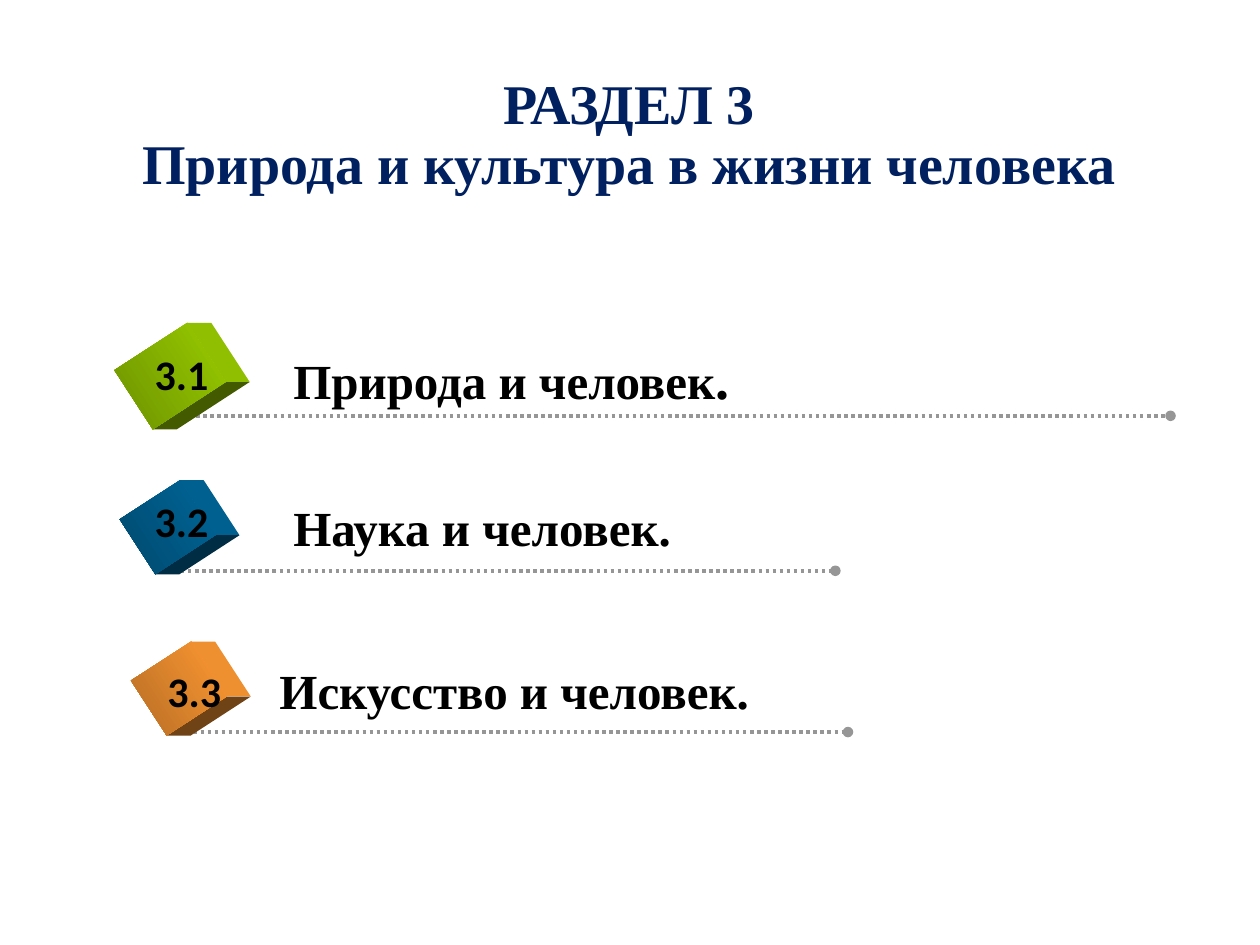
import math
from dataclasses import dataclass

from lxml import etree
from pptx import Presentation
from pptx.dml.color import RGBColor
from pptx.enum.dml import MSO_LINE
from pptx.enum.shapes import MSO_CONNECTOR, MSO_SHAPE
from pptx.enum.text import MSO_ANCHOR, PP_ALIGN
from pptx.oxml.ns import qn
from pptx.util import Inches, Pt

STRAIGHT = MSO_CONNECTOR.STRAIGHT
RECTANGLE = MSO_SHAPE.RECTANGLE
DOTTED = MSO_LINE.ROUND_DOT
MIDDLE = MSO_ANCHOR.MIDDLE
TOP = MSO_ANCHOR.TOP
CENTER = PP_ALIGN.CENTER
LEFT = PP_ALIGN.LEFT

NAVY = RGBColor(0x00, 0x20, 0x60)
BLACK = RGBColor(0x00, 0x00, 0x00)
GRAY = RGBColor(0x96, 0x96, 0x96)
GREEN = RGBColor(0x99, 0xCC, 0x00)
GREEN_SIDE = RGBColor(0x8F, 0xBF, 0x00)
GREEN_SHADE = RGBColor(0x43, 0x5A, 0x00)
GREEN_DARK = RGBColor(0x6D, 0x92, 0x00)
BLUE = RGBColor(0x00, 0x66, 0x99)
BLUE_SIDE = RGBColor(0x00, 0x60, 0x90)
BLUE_SHADE = RGBColor(0x00, 0x2D, 0x44)
BLUE_DARK = RGBColor(0x00, 0x49, 0x6D)
ORANGE = RGBColor(0xFF, 0x99, 0x33)
ORANGE_SIDE = RGBColor(0xEF, 0x90, 0x30)
ORANGE_SHADE = RGBColor(0x70, 0x43, 0x16)
ORANGE_DARK = RGBColor(0xB6, 0x6D, 0x24)

SERIF = "Times New Roman"
TITLE_FORMAT = {"name": SERIF, "size": Pt(32), "bold": True}
TOPIC_FORMAT = {"name": SERIF, "size": Pt(28), "bold": True}
NUMBER_FORMAT = {"name": "Calibri", "size": Pt(24), "bold": True}
CUBE_ANGLE = 57
CUBE_DEPTH = 0.19


@dataclass
class Topic:
    """One numbered topic; offsets are measured from its cube's box."""
    number: str
    runs: list
    colors: tuple
    box: tuple
    number_box: tuple
    topic_box: tuple
    rule: tuple


TOPICS = [
    Topic("3.1", [("Природа и человек", TOPIC_FORMAT), (".", TITLE_FORMAT)],
          (GREEN, GREEN_DARK, GREEN_SIDE, GREEN_SHADE), (1.07, 2.64, 0.56, 0.69),
          (0.06, 0.08, 0.64, 0.51), (1.16, 0.04, 3.7, 0.64), (0.43, 0.66, 7.79)),
    Topic("3.2", [("Наука и человек.", TOPIC_FORMAT)],
          (BLUE, BLUE_DARK, BLUE_SIDE, BLUE_SHADE), (1.07, 3.9, 0.52, 0.57),
          (0.06, -0.02, 0.87, 0.51), (1.16, 0, 3.23, 0.57), (0.31, 0.63, 5.25)),
    Topic("3.3", [("Искусство и человек.", TOPIC_FORMAT)],
          (ORANGE, ORANGE_DARK, ORANGE_SIDE, ORANGE_SHADE), (1.16, 5.18, 0.52, 0.57),
          (0.07, 0.05, 0.63, 0.51), (0.96, 0.01, 3.97, 0.57), (0.32, 0.63, 5.25)),
]


def add_text(slide, box, runs, color=BLACK, anchor=TOP, alignment=LEFT, wrap=False, spacing=1.0):
    """Add a text box with one paragraph of formatted runs."""
    shape = slide.shapes.add_textbox(*map(Inches, box))
    frame = shape.text_frame
    frame.word_wrap = wrap
    frame.vertical_anchor = anchor
    paragraph = frame.paragraphs[0]
    paragraph.alignment = alignment
    paragraph.line_spacing = spacing
    for index, (text, formats) in enumerate(runs):
        if index and text == "\v":
            paragraph.add_line_break()
            continue
        run = paragraph.add_run()
        run.text = text
        for name, value in formats.items():
            setattr(run.font, name, value)
        run.font.color.rgb = color


def add_rule(slide, left, top, width):
    """Add a dotted rule that ends in a round dot."""
    connector = slide.shapes.add_connector(
        STRAIGHT, Inches(left), Inches(top), Inches(left + width), Inches(top))
    connector.line.color.rgb = GRAY
    connector.line.width = Pt(2)
    connector.line.dash_style = DOTTED
    etree.SubElement(connector.line._get_or_add_ln(), qn("a:tailEnd"), type="oval")
    etree.SubElement(connector._element.spPr, qn("a:effectLst"))


def add_face(slide, points, color):
    """Add a flat side of a cube."""
    builder = slide.shapes.build_freeform(
        *map(Inches, points[0]))
    builder.add_line_segments([tuple(map(Inches, point)) for point in points[1:]])
    shape = builder.convert_to_shape()
    shape.shadow.inherit = False
    shape.fill.solid()
    shape.fill.fore_color.rgb = color
    shape.line.fill.background()


def add_cube(slide, box, colors):
    """Add a tilted cube whose front is the turned box."""
    left, top, width, height = box
    light, dark, side, shade = colors
    cosine = math.cos(math.radians(CUBE_ANGLE))
    sine = math.sin(math.radians(CUBE_ANGLE))

    def corner(x, y, depth=0):
        return (left + width / 2 + x * width / 2 * cosine - y * height / 2 * sine + depth,
                top + height / 2 + x * width / 2 * sine + y * height / 2 * cosine)

    for start, end, color in (((-1, -1), (1, -1), side), ((1, -1), (1, 1), shade)):
        add_face(slide, [corner(*start), corner(*start, CUBE_DEPTH),
                         corner(*end, CUBE_DEPTH), corner(*end)], color)
    front = slide.shapes.add_shape(RECTANGLE, *map(Inches, box))
    front.rotation = CUBE_ANGLE
    front.shadow.inherit = False
    front.line.fill.background()
    front.fill.gradient()
    front.fill.gradient_angle = 270
    for stop, position, color in zip(front.fill.gradient_stops, (0, 1), (light, dark)):
        stop.position = position
        stop.color.rgb = color


def add_topic(slide, topic):
    """Add a topic's rule, cube, number and text around its box."""
    left, top = topic.box[:2]

    def place(offset):
        return (left + offset[0], top + offset[1], *offset[2:])

    add_rule(slide, *place(topic.rule))
    add_cube(slide, topic.box, topic.colors)
    add_text(slide, place(topic.number_box), [(topic.number, NUMBER_FORMAT)])
    add_text(slide, place(topic.topic_box), topic.runs)


def add_title(slide, box):
    """Add the two-line section title."""
    lines = ["РАЗДЕЛ 3", "\v", "Природа и культура в жизни человека"]
    add_text(slide, box, [(line, TITLE_FORMAT) for line in lines],
             NAVY, MIDDLE, CENTER, True, 0.9)


def main():
    """Build and save the section slide."""
    presentation = Presentation()
    presentation.slide_width = Inches(10)
    presentation.slide_height = Inches(7.5)
    slide = presentation.slides.add_slide(presentation.slide_layouts[6])
    add_title(slide, (0.68, 0.59, 8.63, 0.98))
    for topic in TOPICS:
        add_topic(slide, topic)
    presentation.save("out.pptx")


if __name__ == "__main__":
    main()
